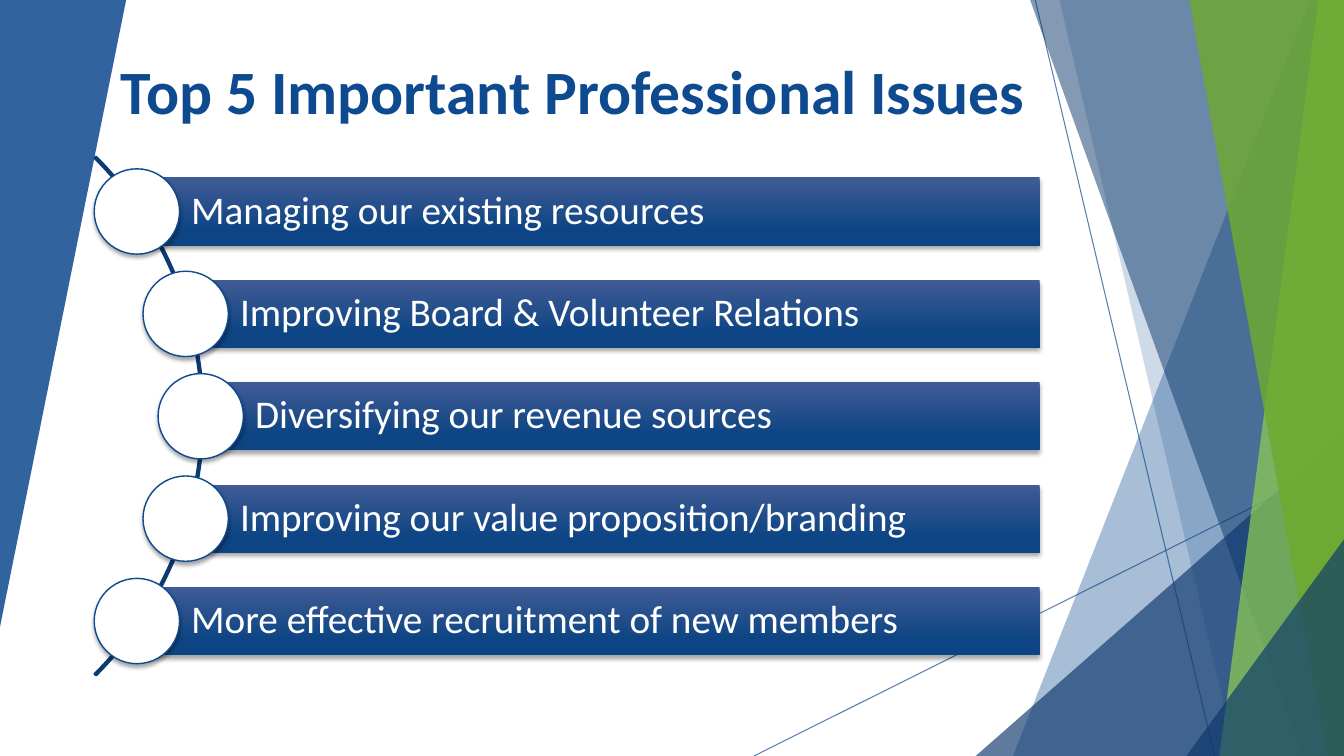
from dataclasses import dataclass

from lxml import etree
from pptx import Presentation
from pptx.dml.color import RGBColor
from pptx.enum.shapes import MSO_CONNECTOR, MSO_SHAPE
from pptx.enum.text import MSO_ANCHOR, PP_ALIGN
from pptx.oxml.ns import qn
from pptx.util import Cm, Pt

STRAIGHT = MSO_CONNECTOR.STRAIGHT
ARC, BAR, DOT = MSO_SHAPE.BLOCK_ARC, MSO_SHAPE.RECTANGLE, MSO_SHAPE.OVAL
MIDDLE, CENTER, LEFT = MSO_ANCHOR.MIDDLE, PP_ALIGN.CENTER, PP_ALIGN.LEFT


@dataclass(frozen=True)
class Theme:
    font: str = "Calibri"
    title: Pt = Pt(44)
    body: Pt = Pt(28)
    blue: RGBColor = RGBColor(0x0E, 0x4A, 0x8F)
    navy: RGBColor = RGBColor(0x0B, 0x37, 0x6B)
    arc: RGBColor = RGBColor(0x0B, 0x3B, 0x73)
    lime: RGBColor = RGBColor(0x92, 0xD0, 0x50)
    green: RGBColor = RGBColor(0x6E, 0xAA, 0x2E)
    top: RGBColor = RGBColor(0x40, 0x5C, 0x96)
    base: RGBColor = RGBColor(0x0D, 0x44, 0x83)
    white: RGBColor = RGBColor(0xFF, 0xFF, 0xFF)


def fade(shape, opacity):
    """Set the opacity, in percent, of every colour in the shape."""
    for color in shape._element.spPr.iter(qn("a:srgbClr")):
        etree.SubElement(color, qn("a:alpha"), val=str(opacity * 1000))


def cast_shadow(shape):
    shape.shadow.inherit = False
    effects = shape._element.spPr.find(qn("a:effectLst"))
    outer = etree.SubElement(effects, qn("a:outerShdw"), blurRad=str(Pt(3)),
                             dist=str(Pt(2)), dir="5400000", rotWithShape="0")
    color = etree.SubElement(outer, qn("a:srgbClr"), val="000000")
    etree.SubElement(color, qn("a:alpha"), val="35000")


theme = Theme()
WIDE, HIGH = 33.87, 19.05
deck = Presentation()
deck.slide_width, deck.slide_height = Cm(WIDE), Cm(HIGH)
slide = deck.slides.add_slide(deck.slide_layouts[6])
shapes = slide.shapes

# Background lines and translucent shards
for ends in [(19, HIGH, WIDE, 11.63), (26.09, 0, 30.61, HIGH)]:
    line = shapes.add_connector(STRAIGHT, *map(Cm, ends))
    line.line.color.rgb = theme.blue
    line.line.width = Pt(0.75)
    etree.SubElement(line._element.spPr, qn("a:effectLst"))
    fade(line, 70)

floor, roof = (WIDE, HIGH), (WIDE, 0)
shards = [
    (theme.blue, 36, [(33.02, 0), (25.53, HIGH), floor, roof]),
    (theme.blue, 20, [(26.7, 0), (31.14, HIGH), floor, roof]),
    (theme.navy, 66, [(24.59, HIGH), (WIDE, 10.9), floor]),
    (theme.navy, 50, [(25.96, 0), (32.84, HIGH), floor, roof]),
    (theme.lime, 70, [(33.22, 0), (30.73, HIGH), floor, roof]),
    (theme.green, 82, [(29.97, 0), (33.45, HIGH), floor, roof]),
    (theme.navy, 66, [(29.9, HIGH), (WIDE, 13.59), floor]),
    (theme.blue, 85, [(0, 0), (3.18, 0), (0, 15.8)]),
]
for color, opacity, corners in shards:
    points = [(Cm(x), Cm(y)) for x, y in corners]
    pen = shapes.build_freeform(*points[0])
    pen.add_line_segments(points[1:], close=True)
    shard = pen.convert_to_shape()
    shard.shadow.inherit = False
    shard.fill.solid()
    shard.fill.fore_color.rgb = color
    shard.line.fill.background()
    fade(shard, opacity)

# Arc behind the list, from 315 to 45 degrees
arc = shapes.add_shape(ARC, Cm(-13.36), Cm(1.24), Cm(18.49), Cm(18.49))
for index, value in enumerate([189, 27, 0.003]):
    arc.adjustments[index] = value
arc.shadow.inherit = False
arc.fill.background()
arc.line.color.rgb = theme.arc
arc.line.width = Pt(1.5)

# Each bar starts at the centre of its dot
issues = [
    (3.45, "Managing our existing resources"),
    (4.68, "Improving Board & Volunteer Relations"),
    (5.06, "Diversifying our revenue sources"),
    (4.68, "Improving our value proposition/branding"),
    (3.45, "More effective recruitment of new members"),
]
FIRST, PITCH, TALL, RIGHT, SIZE = 4.47, 2.58, 1.72, 26.2, 2.15
for row, (left, issue) in enumerate(issues):
    top = FIRST + row * PITCH
    bar = shapes.add_shape(BAR, Cm(left), Cm(top), Cm(RIGHT - left), Cm(TALL))
    bar.fill.gradient()
    bar.fill.gradient_angle = 270
    for stop, color, place in zip(bar.fill.gradient_stops,
                                  (theme.top, theme.base), (0, 0.78)):
        stop.color.rgb = color
        stop.position = place
    bar.line.fill.background()
    cast_shadow(bar)

    frame = bar.text_frame
    frame.word_wrap = True
    frame.vertical_anchor = MIDDLE
    frame.margin_left = Cm(1.37)
    frame.margin_right = frame.margin_top = frame.margin_bottom = Cm(0.2)
    text = frame.paragraphs[0]
    text.text = issue
    text.alignment = LEFT
    text.line_spacing = 0.9
    text.font.name = theme.font
    text.font.size = theme.body
    text.font.color.rgb = theme.white

    dot = shapes.add_shape(DOT, Cm(left - SIZE / 2),
                           Cm(top + (TALL - SIZE) / 2), Cm(SIZE), Cm(SIZE))
    dot.fill.solid()
    dot.fill.fore_color.rgb = theme.white
    dot.line.color.rgb = theme.blue
    dot.line.width = Pt(1)
    cast_shadow(dot)

# Title
box = shapes.add_textbox(Cm(2.72), Cm(1.2), Cm(23.47), Cm(2.46))
frame = box.text_frame
frame.word_wrap = True
frame.margin_left = frame.margin_right = 0
title = frame.paragraphs[0]
title.text = "Top 5 Important Professional Issues"
title.alignment = CENTER
title.font.name = theme.font
title.font.size = theme.title
title.font.bold = True
title.font.color.rgb = theme.blue

deck.save("out.pptx")
